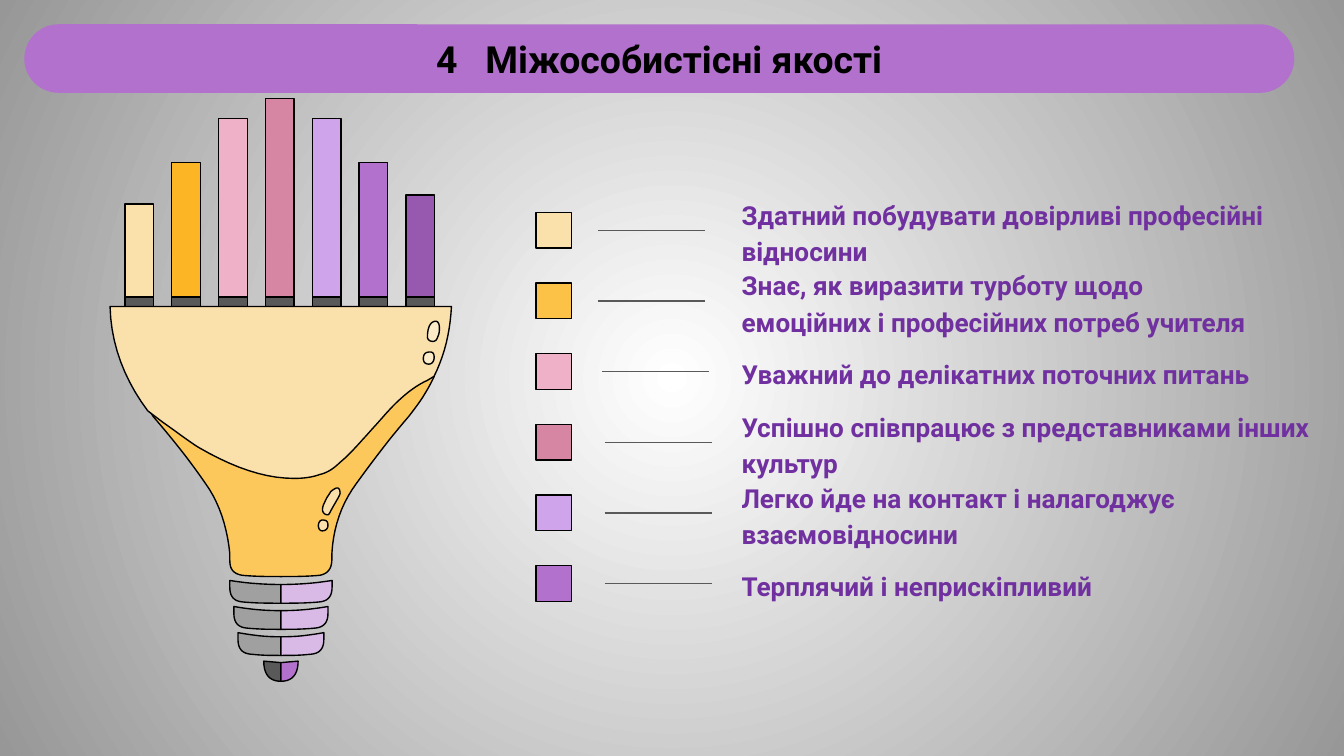
from dataclasses import dataclass

from lxml import etree
from pptx import Presentation
from pptx.dml.color import RGBColor
from pptx.enum.shapes import MSO_CONNECTOR, MSO_SHAPE
from pptx.enum.text import MSO_ANCHOR, PP_ALIGN
from pptx.oxml.ns import qn
from pptx.util import Pt

RECT = MSO_SHAPE.RECTANGLE
ROUND = MSO_SHAPE.ROUNDED_RECTANGLE
LINE = MSO_CONNECTOR.STRAIGHT
MIDDLE = MSO_ANCHOR.MIDDLE
LEFT, CENTER = PP_ALIGN.LEFT, PP_ALIGN.CENTER

BLACK, GREY, SILVER = "000000", "595959", "A0A0A0"
CREAM, GOLD, PINK, ROSE = "FAE0AA", "FCC147", "EEB1C7", "D686A3"
LILAC, VIOLET, PLUM, MAUVE = "D0A4EB", "B271CC", "9759B0", "D9B9E6"
AMBER, HONEY, IVORY, INK = "FCB524", "FDC85B", "FCEBC9", "7030A0"

FRAME = {"word_wrap": True, "vertical_anchor": MIDDLE,
         "margin_left": Pt(7.2), "margin_right": Pt(7.2),
         "margin_top": Pt(7.2), "margin_bottom": Pt(7.2)}
FONT = {"name": "Roboto", "bold": True}
MID = 150.5  # axis of the bulb

# A segment is a point (2 numbers) or a cubic curve (6 numbers)
Loop = list[tuple[float, ...]]


@dataclass
class Bar:
    top: float
    color: str


@dataclass
class Form:
    color: str
    loops: list[Loop]


@dataclass
class Row:
    color: str
    text: str
    start: float = 324
    width: float = 302.4


BARS = [Bar(109.4, CREAM), Bar(87.1, AMBER), Bar(63.4, PINK), Bar(52.6, ROSE),
        Bar(63.4, LILAC), Bar(87.1, VIOLET), Bar(104.4, PLUM)]

ROWS = [
    Row(CREAM, "Здатний побудувати довірливі професійні відносини", 320.4),
    Row(GOLD, "Знає, як виразити турботу щодо емоційних і професійних потреб учителя", 320.4),
    Row(PINK, "Уважний до делікатних поточних питань", 322.6),
    Row(ROSE, "Успішно співпрацює з представниками інших культур", width=329.8),
    Row(LILAC, "Легко йде на контакт і налагоджує взаємовідносини", width=319),
    Row(VIOLET, "Терплячий і неприскіпливий"),
]

NECK = Form(HONEY, [[
    (79.9, 219.6), (82.1, 223.2),
    (91.4, 234, 100.8, 245.5, 110.2, 259.2),
    (117.4, 269.3, 121.7, 282.2, 123.1, 296.6), (123.1, 300.2),
    (123.1, 305.3, 125.3, 307.4, 129.6, 308.2),
    (136.8, 308.9, 143.3, 308.9, 150.5, 308.9),
    (157.7, 308.9, 164.2, 308.9, 171.4, 308.2),
    (175.7, 307.4, 177.8, 304.6, 177.8, 299.5), (177.8, 296.6),
    (178.6, 282.2, 182.9, 270, 190.8, 259.2),
    (200.2, 246.2, 209.5, 234, 218.9, 223.2),
    (224.6, 216, 229, 209.5, 232.6, 201.6)]])

BOWL = Form(CREAM, [[
    (59, 164.2), (59.5, 185, 67, 203.8, 79.2, 220.1), (87.1, 226.1),
    (94.3, 231.1, 100.8, 236.2, 106.6, 239.8),
    (125.3, 250.6, 141.8, 256.3, 157.7, 256.3),
    (162.7, 256.3, 167.8, 255.6, 171.4, 254.2),
    (175, 253.4, 178.6, 251.3, 182.2, 247.7),
    (185, 245.5, 188.6, 241.9, 193.7, 236.2),
    (201.6, 227.5, 206.6, 221.8, 208.8, 219.4),
    (215.3, 212.4, 222.5, 206.6, 229, 203.8), (232.6, 201.6),
    (238.3, 190.1, 241.2, 177.8, 241.9, 164.2)]])

GLINTS = [
    Form(IVORY, [
        [(233.3, 172.1), (230.4, 172.3, 229, 175.7, 229, 180.7),
         (229.2, 182.2, 230.4, 182.9, 231.8, 182.9),
         (233.3, 182.9, 234, 182.2, 234.7, 180),
         (235.4, 178.6, 235.4, 177.1, 235.4, 175.7),
         (235.4, 173.5, 234.7, 172.1, 233.3, 172.1)],
        [(230.4, 188.6), (227.5, 188.6, 226.8, 190.1, 226.8, 192.2),
         (226.8, 194, 227.9, 195.1, 229.7, 195.1),
         (231.5, 195.1, 232.6, 193.5, 232.6, 191.5),
         (232.6, 189.4, 231.8, 188.6, 230.4, 188.6)]]),
    Form(CREAM, [
        [(180.7, 261.4), (180, 261.4, 178.6, 262.1, 177.1, 263.5),
         (176.4, 265, 175, 266.4, 174.2, 268.6),
         (173.5, 270, 172.8, 271.4, 172.8, 272.9),
         (172.8, 274.7, 174, 275.8, 175.7, 275.8),
         (176.4, 275.8, 177.1, 273.6, 179.3, 270),
         (181.4, 266.4, 182.2, 265, 182.2, 264.2),
         (182.2, 262.1, 181.4, 261.4, 180.7, 261.4)],
        [(172.8, 278.6), (171.4, 278.6, 170.6, 280.1, 170.6, 281.5),
         (170.6, 283.5, 171.5, 284.4, 172.8, 284.4),
         (174.6, 284.4, 175.7, 283, 175.7, 281.5),
         (175.7, 279.4, 175, 278.6, 172.8, 278.6)]]),
]


def rgb(code: str) -> RGBColor:
    return RGBColor.from_string(code)


def paint(shape, color: str, edge: str | None = BLACK) -> None:
    shape.shadow.inherit = False
    shape.fill.solid()
    shape.fill.fore_color.rgb = rgb(color)
    if edge:
        shape.line.color.rgb = rgb(edge)
        shape.line.width = Pt(0.75)
    else:
        shape.line.fill.background()


def box(shapes, x: float, y: float, w: float, h: float, color: str) -> None:
    paint(shapes.add_shape(RECT, Pt(x), Pt(y), Pt(w), Pt(h)), color)


def trace(loop: Loop, steps: int = 10) -> list[tuple[int, int]]:
    """Turn points and cubic curves into a chain of points."""
    spots = []
    for seg in loop:
        if len(seg) == 2:
            spots.append(seg)
            continue
        ctrl = [spots[-1], seg[:2], seg[2:4], seg[4:]]
        for i in range(1, steps + 1):
            t = i / steps
            u = 1 - t
            mix = (u**3, 3 * u * u * t, 3 * u * t * t, t**3)
            spots.append(tuple(sum(m * c[k] for m, c in zip(mix, ctrl)) for k in (0, 1)))
    return [(Pt(x), Pt(y)) for x, y in spots]


def outline(shapes, form: Form) -> None:
    pen = None
    for loop in form.loops:
        first, *rest = trace(loop)
        if pen is None:
            pen = shapes.build_freeform(*first)
        else:
            pen.move_to(*first)
        pen.add_line_segments(rest, close=True)
    paint(pen.convert_to_shape(), form.color)


def ring(side: int, top: float, half: float) -> Loop:
    """One half of a screw ring; side is -1 for left and 1 for right."""
    edge, low = MID + side * half, top + 11.5
    turn, inner = edge - side * 2.2, edge - side * 6.5
    return [(edge, top), (edge - side * 9, top + 1.5, MID + side * 9, top + 2.2, MID, top + 2.2),
            (MID, top + 12.2), (MID + side * 7, top + 12.2, inner - side * 7, top + 12.2, inner, low),
            (turn, low - 0.5, edge, top + 8.6, edge, top + 3.6)]


def tip(side: int) -> Loop:
    edge = MID + side * 9.2
    return [(edge, 354.2), (MID, 355), (MID, 365), (MID + side * 6, 365, edge, 361.5, edge, 354.2)]


def write(shape, text: str, size: float, color: str, align, space: float = 1.0) -> None:
    frame = shape.text_frame
    for key, value in FRAME.items():
        setattr(frame, key, value)
    para = frame.paragraphs[0]
    para.alignment, para.line_spacing = align, space
    for part in text.split("|"):
        run = para.add_run()
        run.text = part
        for key, value in {**FONT, "size": Pt(size)}.items():
            setattr(run.font, key, value)
        run.font.color.rgb = rgb(color)


def rule(shapes, x: float, y: float, w: float) -> None:
    line = shapes.add_connector(LINE, Pt(x), Pt(y), Pt(x + w), Pt(y))
    line.line.color.rgb = rgb(GREY)
    line.line.width = Pt(0.75)
    props = line.element.find(qn("p:spPr"))
    etree.SubElement(props, qn("a:effectLst"))


def backdrop(slide) -> None:
    fill = slide.background.fill
    fill.gradient()
    for stop, color in zip(fill.gradient_stops, ("FFFFFF", "979797")):
        stop.color.rgb = rgb(color)
    grad = next(slide.element.iter(qn("a:gradFill")))
    glow = etree.Element(qn("a:path"), {"path": "circle"})
    etree.SubElement(glow, qn("a:fillToRect"), dict.fromkeys("ltrb", "50000"))
    grad.replace(grad.find(qn("a:lin")), glow)


def main() -> None:
    deck = Presentation()
    deck.slide_width, deck.slide_height = Pt(720), Pt(405)
    slide = deck.slides.add_slide(deck.slide_layouts[6])
    shapes = slide.shapes
    backdrop(slide)

    # Bars in their sockets
    for i, bar in enumerate(BARS):
        x = 66.9 + 25.1 * i
        box(shapes, x, 157, 15.4, 7.9, GREY)
        box(shapes, x, bar.top, 15.4, 159.1 - bar.top, bar.color)

    # Bulb, screw rings and tip
    for form in (NECK, BOWL, *GLINTS):
        outline(shapes, form)
    for side, metal, end in ((-1, SILVER, GREY), (1, MAUVE, VIOLET)):
        rings = [ring(side, 311 + 14 * i, 27.4 - 2.2 * i) for i in range(3)]
        outline(shapes, Form(metal, rings))
        outline(shapes, Form(end, [tip(side)]))

    # Legend
    for i, row in enumerate(ROWS):
        y = 113.8 + 37.86 * i
        box(shapes, 287.1, y, 19.1, 19.1, row.color)
        rule(shapes, row.start, y + 9.6, 57.2)
        label = shapes.add_textbox(Pt(390.2), Pt(y - 10.1), Pt(row.width), Pt(39.6))
        write(label, row.text, 14, INK, LEFT, 1.15)

    # Title, with a wide gap after its number
    title = shapes.add_shape(ROUND, Pt(13), Pt(13), Pt(680.4), Pt(36.7))
    title.adjustments[0] = 0.5
    paint(title, VIOLET, None)
    write(title, "4 |Міжособистісні якості", 20, BLACK, CENTER)
    next(title.element.iter(qn("a:rPr"))).set("spc", "500")

    deck.save("out.pptx")


if __name__ == "__main__":
    main()
